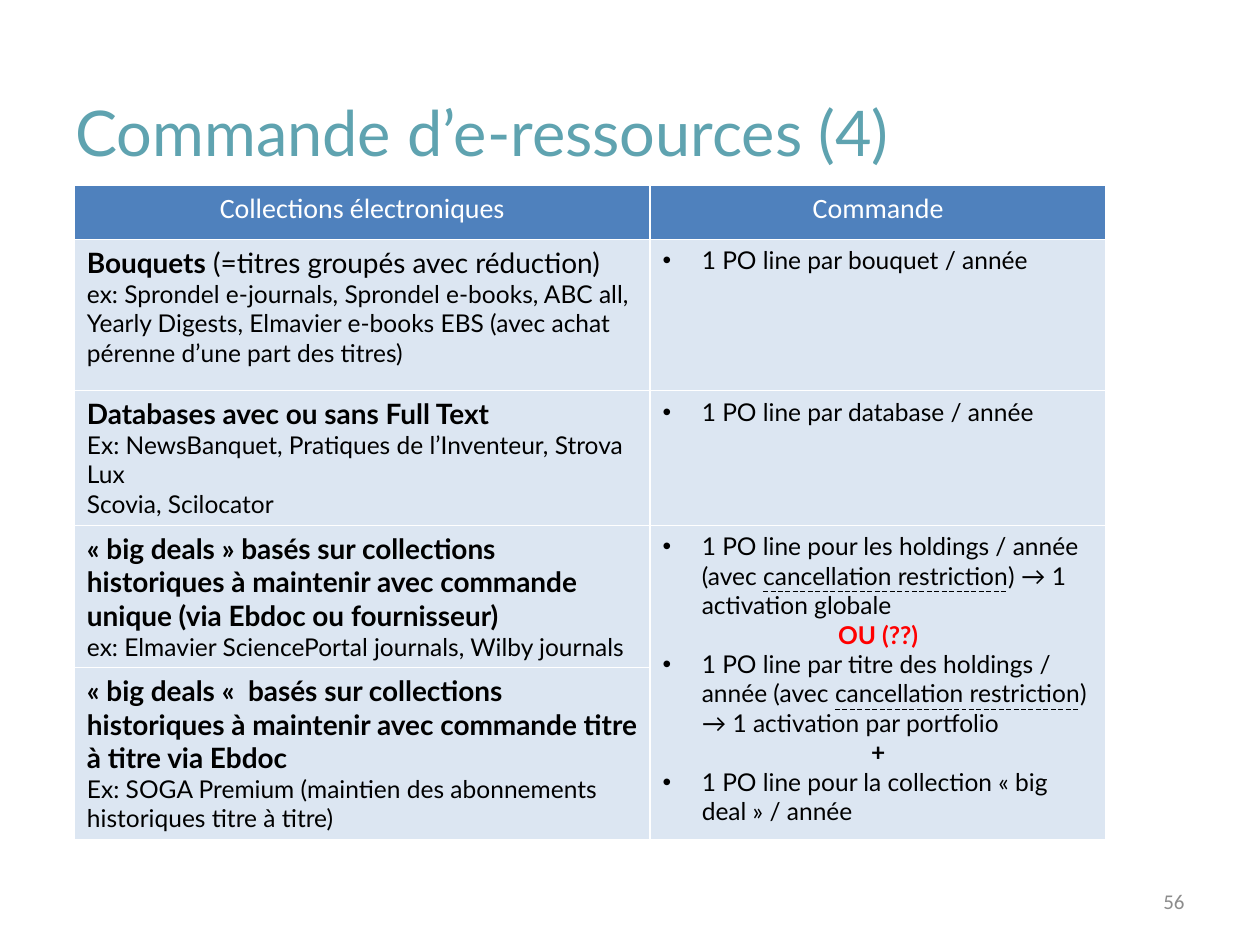
from lxml import etree
from pptx import Presentation
from pptx.dml.color import RGBColor
from pptx.enum.text import MSO_ANCHOR, MSO_UNDERLINE, PP_ALIGN
from pptx.oxml.ns import qn
from pptx.util import Inches, Pt

LEFT, CENTER, RIGHT = PP_ALIGN.LEFT, PP_ALIGN.CENTER, PP_ALIGN.RIGHT
MIDDLE = MSO_ANCHOR.MIDDLE
DASHED = MSO_UNDERLINE.DASH_LINE

WHITE, BLACK, RED = "FFFFFF", "000000", "FF0000"
TEAL, GRAY = "5FA3B0", "8C8C8C"
HEADER_FILL, BODY_FILL = "4F81BD", "DCE6F2"
BODY_FONT, PLAIN_FONT = "Lato", "Calibri"


def rgb(hex_color):
    return RGBColor.from_string(hex_color)


def run(text, size=14, bold=False, color=BLACK, underline=False, font=BODY_FONT):
    return dict(text=text, size=size, bold=bold, color=color, underline=underline, font=font)


def para(*runs, align=LEFT, bullet=False):
    return dict(runs=runs, align=align, bullet=bullet)


def heading(text):
    return run(text, size=16, bold=True)


def bullet(*runs):
    return para(*runs, bullet=True)


def header(text):
    return [para(run(text, size=16, color=WHITE, font=PLAIN_FONT), align=CENTER)]


class SlideBuilder:
    """Holds the current slide and draws its kinds of element."""

    def __init__(self, slide):
        self.slide = slide

    def fill_text(self, frame, paragraphs):
        frame.word_wrap = True
        for index, content in enumerate(paragraphs):
            paragraph = frame.add_paragraph() if index else frame.paragraphs[0]
            paragraph.alignment = content["align"]
            if content["bullet"]:
                self.add_bullet(paragraph)
            for style in content["runs"]:
                piece = paragraph.add_run()
                piece.text = style["text"]
                piece.font.size = Pt(style["size"])
                piece.font.name = style["font"]
                piece.font.bold = style["bold"]
                piece.font.underline = style["underline"]
                piece.font.color.rgb = rgb(style["color"])

    def add_bullet(self, paragraph):
        properties = paragraph._p.get_or_add_pPr()
        properties.set("marL", str(Inches(0.31)))
        properties.set("indent", str(-Inches(0.31)))
        etree.SubElement(properties, qn("a:buFont")).set("typeface", "Arial")
        etree.SubElement(properties, qn("a:buChar")).set("char", "•")

    def text(self, left, top, width, height, paragraph):
        box = self.slide.shapes.add_textbox(
            Inches(left), Inches(top), Inches(width), Inches(height))
        box.text_frame.vertical_anchor = MIDDLE
        self.fill_text(box.text_frame, [paragraph])

    def border(self, cell, color=WHITE, width=1):
        properties = cell._tc.get_or_add_tcPr()
        for position, side in enumerate(("lnL", "lnR", "lnT", "lnB")):
            line = etree.Element(qn(f"a:{side}"), w=str(Pt(width)))
            fill = etree.SubElement(line, qn("a:solidFill"))
            etree.SubElement(fill, qn("a:srgbClr")).set("val", color)
            properties.insert(position, line)

    def table(self, left, top, widths, heights, rows):
        """Draw a table whose None entries are merged into the cell above."""
        grid = self.slide.shapes.add_table(
            len(rows), len(widths), Inches(left), Inches(top),
            Inches(sum(widths)), Inches(sum(heights))).table
        for column, width in zip(grid.columns, widths):
            column.width = Inches(width)
        for row, height in zip(grid.rows, heights):
            row.height = Inches(height)
        for r, contents in enumerate(rows):
            for c, paragraphs in enumerate(contents):
                cell = grid.cell(r, c)
                cell.fill.solid()
                cell.fill.fore_color.rgb = rgb(BODY_FILL if r else HEADER_FILL)
                self.border(cell)
                if paragraphs is None:
                    grid.cell(r - 1, c).merge(cell)
                else:
                    self.fill_text(cell.text_frame, paragraphs)


def main():
    presentation = Presentation()
    presentation.slide_width, presentation.slide_height = Inches(10), Inches(7.5)
    builder = SlideBuilder(presentation.slides.add_slide(presentation.slide_layouts[6]))

    restriction = run("cancellation restriction", underline=DASHED)
    order_rows = [
        [header("Collections électroniques"), header("Commande")],
        [
            [para(heading("Bouquets"), run(" (=titres groupés avec réduction)", size=16)),
             para(run("ex: Sprondel e-journals, Sprondel e-books, ABC all, "
                      "Yearly Digests, Elmavier e-books EBS (avec achat "
                      "pérenne d’une part des titres)"))],
            [bullet(run("1 PO line par bouquet / année"))],
        ],
        [
            [para(heading("Databases avec ou sans Full Text")),
             para(run("Ex: NewsBanquet, Pratiques de l’Inventeur, Strova Lux")),
             para(run("Scovia, Scilocator"))],
            [bullet(run("1 PO line par database / année"))],
        ],
        [
            [para(heading("« big deals » basés sur collections historiques à maintenir "
                          "avec commande unique (via Ebdoc ou fournisseur)")),
             para(run("ex: Elmavier SciencePortal journals, Wilby journals"))],
            [bullet(run("1 PO line pour les holdings / année (avec "), restriction,
                    run(") → 1 activation globale")),
             para(run("OU (??)", bold=True, color=RED), align=CENTER),
             bullet(run("1 PO line par titre des holdings / année (avec "), restriction,
                    run(") → 1 activation par portfolio")),
             para(run("+", bold=True), align=CENTER),
             bullet(run("1 PO line pour la collection « big deal » / année"))],
        ],
        [
            [para(heading("« big deals «  basés sur collections historiques à maintenir "
                          "avec commande titre à titre via Ebdoc")),
             para(run("Ex: SOGA Premium (maintien des abonnements "
                      "historiques titre à titre)"))],
            None,
        ],
    ]
    builder.table(0.59, 1.47, [4.57, 3.62], [0.43, 1.2, 1.07, 1.13, 1.36], order_rows)
    builder.text(0.5, 0.7, 9, 0.68,
                 para(run("Commande d’e-ressources (4)", size=36, color=TEAL)))
    builder.text(7.17, 6.95, 2.33, 0.4,
                 para(run("56", size=12, color=GRAY, font=PLAIN_FONT), align=RIGHT))
    presentation.save("out.pptx")


if __name__ == "__main__":
    main()
